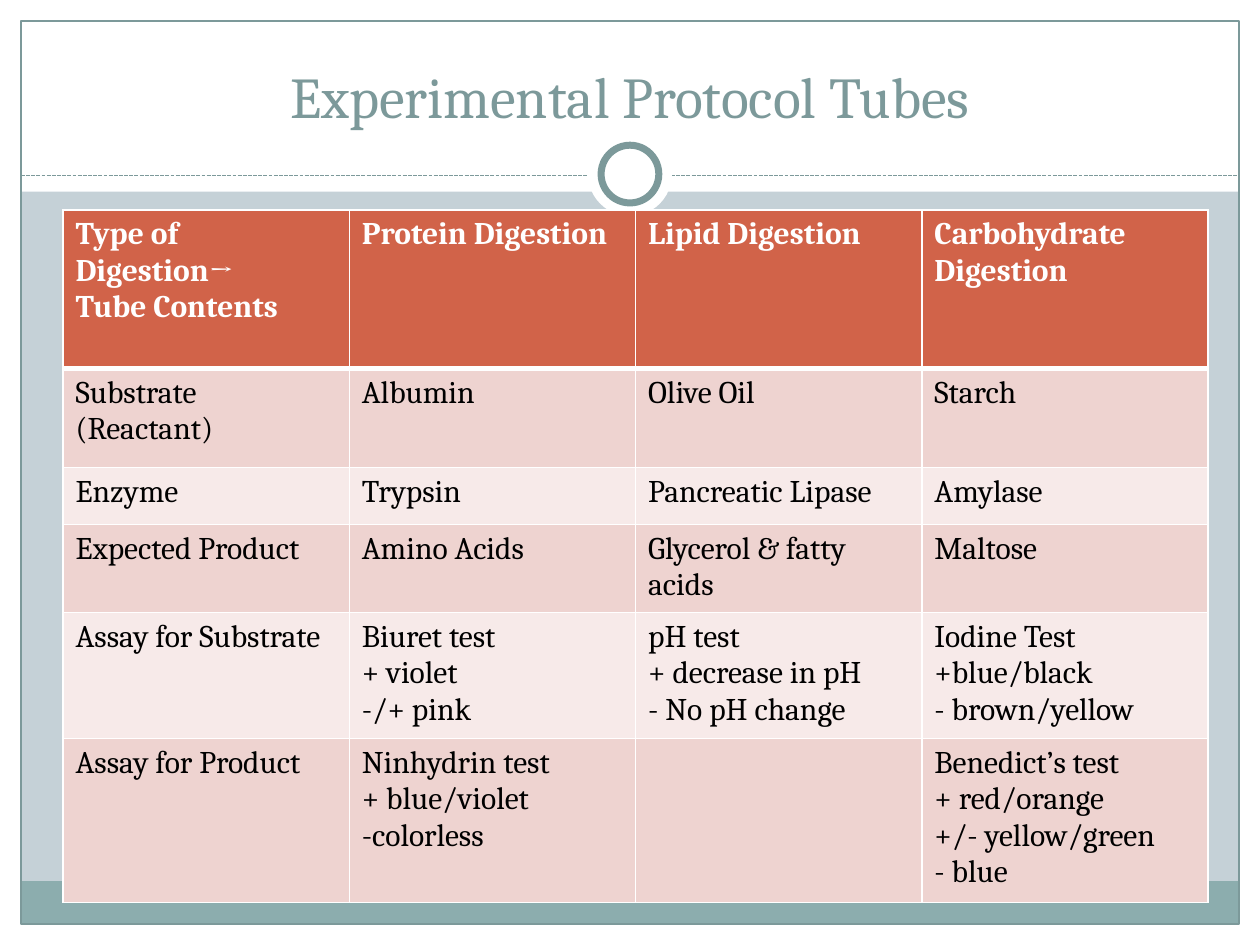
import lxml.etree
import pptx
import pptx.dml.color
import pptx.enum.dml
import pptx.enum.shapes
import pptx.enum.text
import pptx.oxml.ns
import pptx.util

Pt = pptx.util.Pt
qn = pptx.oxml.ns.qn
SHAPE = pptx.enum.shapes.MSO_SHAPE

COLORS = {
    "white": "FFFFFF",
    "black": "000000",
    "background": "C5D1D7",
    "footer": "8CADAE",
    "accent": "7C999A",
    "header": "D16349",
    "band_dark": "EED3D0",
    "band_light": "F7EAE9",
}
ROWS = [
    ["Type of Digestion→\nTube Contents", "Protein Digestion", "Lipid Digestion",
     "Carbohydrate Digestion"],
    ["Substrate (Reactant)", "Albumin", "Olive Oil", "Starch"],
    ["Enzyme", "Trypsin", "Pancreatic Lipase", "Amylase"],
    ["Expected Product", "Amino Acids", "Glycerol & fatty acids", "Maltose"],
    ["Assay for Substrate", "Biuret test\n+ violet\n-/+ pink",
     "pH test\n+ decrease in pH\n- No pH change",
     "Iodine Test\n+blue/black\n- brown/yellow"],
    ["Assay for Product", "Ninhydrin test\n+ blue/violet\n-colorless", "",
     "Benedict’s test\n+ red/orange\n+/- yellow/green\n- blue"],
]
ROW_HEIGHTS = [90.7, 56.5, 32.5, 49, 70, 90.7]
COLUMN_WIDTH = 163.6


def rgb(name):
    return pptx.dml.color.RGBColor.from_string(COLORS[name])


class Deck:
    font = "Cambria"

    def __init__(self, prs):
        self.s = prs.slides.add_slide(prs.slide_layouts[6])

    def background(self, color):
        fill = self.s.background.fill
        fill.solid()
        fill.fore_color.rgb = rgb(color)

    def shape(self, kind, box, fill=None, line=None, width=0.75):
        sp = self.s.shapes.add_shape(kind, *map(Pt, box))
        sp.shadow.inherit = False
        if fill:
            sp.fill.solid()
            sp.fill.fore_color.rgb = rgb(fill)
        else:
            sp.fill.background()
        if line:
            sp.line.color.rgb = rgb(line)
            sp.line.width = Pt(width)
        else:
            sp.line.fill.background()

    def dashed_line(self, x1, x2, y, color):
        straight = pptx.enum.shapes.MSO_CONNECTOR.STRAIGHT
        sp = self.s.shapes.add_connector(straight, Pt(x1), Pt(y), Pt(x2), Pt(y))
        sp.line.color.rgb = rgb(color)
        sp.line.width = Pt(0.75)
        sp.line.dash_style = pptx.enum.dml.MSO_LINE.SQUARE_DOT
        lxml.etree.SubElement(sp.element.spPr, qn("a:effectLst"))

    def text(self, tf, text, color, **style):
        for i, line in enumerate(text.split("\n")):
            p = tf.paragraphs[0] if i == 0 else tf.add_paragraph()
            if not line:
                continue
            r = p.add_run()
            r.text = line
            r.font.color.rgb = rgb(color)
            for key, value in {"name": self.font, **style}.items():
                setattr(r.font, key, value)

    def title(self, box, text, color, size):
        tf = self.s.shapes.add_textbox(*map(Pt, box)).text_frame
        layout = {"word_wrap": True, "vertical_anchor": pptx.enum.text.MSO_ANCHOR.BOTTOM}
        for key, value in layout.items():
            setattr(tf, key, value)
        self.text(tf, text, color, size=Pt(size))
        tf.paragraphs[0].alignment = pptx.enum.text.PP_ALIGN.CENTER

    def border(self, cell, side, width, color):
        tcPr = cell._tc.get_or_add_tcPr()
        ln = lxml.etree.SubElement(tcPr, qn(f"a:ln{side}"), w=str(Pt(width)))
        fill = lxml.etree.SubElement(ln, qn("a:solidFill"))
        lxml.etree.SubElement(fill, qn("a:srgbClr"), val=COLORS[color])

    def table(self, left, top, rows, heights, column_width, size):
        columns = len(rows[0])
        width = columns * column_width
        table = self.s.shapes.add_table(
            len(rows), columns, Pt(left), Pt(top), Pt(width), Pt(sum(heights))).table
        for column in table.columns:
            column.width = Pt(column_width)
        for i, (values, height) in enumerate(zip(rows, heights)):
            table.rows[i].height = Pt(height)
            band = "band_dark" if i % 2 else "band_light"
            fill, color = ("band", "black") if i else ("header", "white")
            fill = band if i else fill
            for j, value in enumerate(values):
                cell = table.cell(i, j)
                thick = {(0, "B"): 3, (1, "T"): 3}
                for side in "LRTB":
                    self.border(cell, side, thick.get((i, side), 1), "white")
                cell.fill.solid()
                cell.fill.fore_color.rgb = rgb(fill)
                self.text(cell.text_frame, value, color, size=Pt(size), bold=i == 0)


def main():
    prs = pptx.Presentation()
    prs.slide_width, prs.slide_height = Pt(720), Pt(540)
    deck = Deck(prs)
    deck.background("background")
    margins = [(0, 528, 720, 12), (0, 0, 720, 109.5), (0, 0, 12, 540), (708, 0, 12, 540)]
    for box in margins:
        deck.shape(SHAPE.RECTANGLE, box, "white")
    deck.shape(SHAPE.RECTANGLE, (11.75, 503.5, 695.75, 24.5), "footer")
    deck.shape(SHAPE.RECTANGLE, (12, 12, 696, 516), line="accent")
    deck.dashed_line(12, 708, 100.5, "accent")
    deck.shape(SHAPE.OVAL, (336, 75.5, 48, 48), "white")
    deck.shape(SHAPE.OVAL, (343.5, 83, 33, 33), "white", "accent", 4)
    deck.title((24, 18, 672, 60), "Experimental Protocol Tubes", "accent", 33)
    deck.table(36, 120, ROWS, ROW_HEIGHTS, COLUMN_WIDTH, 18)
    prs.save("out.pptx")


if __name__ == "__main__":
    main()
